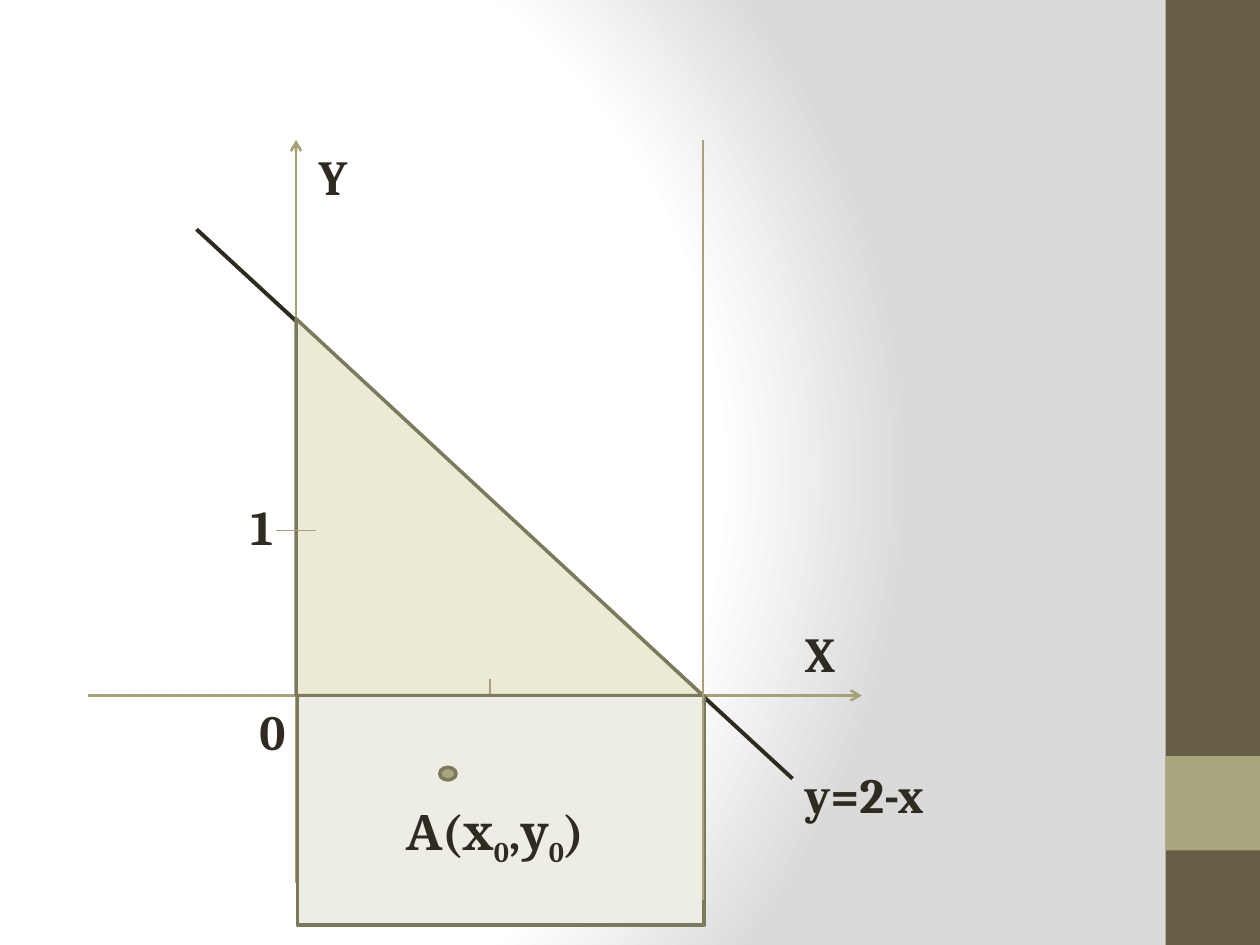
from dataclasses import dataclass

from lxml import etree
from pptx import Presentation
from pptx.dml.color import RGBColor
from pptx.enum import shapes as kinds, text as txt
from pptx.oxml import parse_xml
from pptx.oxml.ns import nsdecls, qn
from pptx.util import Inches, Pt


@dataclass(frozen=True)
class Theme:
    font: str = "Cambria"
    label_size: int = 28
    ink: str = "2F2B20"
    graph: str = "2E2A1F"
    axis: str = "A6A278"
    outline: str = "7D7A5C"
    triangle: str = "ECEAD4"
    rectangle: str = "EEEDE5"
    point: str = "A9A57C"
    sidebar: str = "675E47"
    sidebar_accent: str = "A9A57C"
    back_inner: str = "FFFFFF"
    back_outer: str = "DADADA"
    subscript: int = -25000


@dataclass(frozen=True)
class Box:
    left: float
    top: float
    width: float
    height: float


THEME = Theme()


def set_background(slide):
    """Fill the slide with a radial gradient centred left of the middle."""
    slide.background.fill.solid()
    solid = slide.element.find(".//" + qn("p:bgPr")).find(qn("a:solidFill"))
    stops = [(0, THEME.back_inner), (75, THEME.back_inner), (100, THEME.back_outer)]
    stop_xml = "".join(
        f'<a:gs pos="{pos * 1000}"><a:srgbClr val="{color}"/></a:gs>' for pos, color in stops
    )
    gradient = parse_xml(
        f'<a:gradFill {nsdecls("a")} rotWithShape="1"><a:gsLst>{stop_xml}</a:gsLst>'
        '<a:path path="circle"><a:fillToRect l="20000" t="50000" r="100000" b="50000"/></a:path>'
        "</a:gradFill>"
    )
    solid.getparent().replace(solid, gradient)


def add_figure(slide, kind, box, fill, outline=None):
    figure = slide.shapes.add_shape(
        kind, Inches(box.left), Inches(box.top), Inches(box.width), Inches(box.height)
    )
    figure.shadow.inherit = False
    figure.fill.solid()
    figure.fill.fore_color.rgb = RGBColor.from_string(fill)
    if outline:
        figure.line.color.rgb = RGBColor.from_string(outline)
        figure.line.width = Pt(2)
    else:
        figure.line.fill.background()
    return figure


def add_line(slide, start, end, color, width, arrow=False):
    line = slide.shapes.add_connector(
        kinds.MSO_CONNECTOR.STRAIGHT, *(Inches(value) for value in (*start, *end))
    )
    line.line.color.rgb = RGBColor.from_string(color)
    line.line.width = Pt(width)
    properties = line.element.spPr
    if arrow:
        etree.SubElement(properties.find(qn("a:ln")), qn("a:tailEnd"), type="arrow")
    etree.SubElement(properties, qn("a:effectLst"))


def add_label(slide, left, top, width, parts):
    """Add a bold label; parts are (wording, is_subscript) pairs."""
    label = slide.shapes.add_textbox(Inches(left), Inches(top), Inches(width), Inches(0.57))
    frame = label.text_frame
    frame.word_wrap = True
    frame.auto_size = txt.MSO_AUTO_SIZE.SHAPE_TO_FIT_TEXT
    for wording, is_subscript in parts:
        run = frame.paragraphs[0].add_run()
        run.text = wording
        run.font.name = THEME.font
        run.font.size = Pt(THEME.label_size)
        run.font.bold = True
        run.font.color.rgb = RGBColor.from_string(THEME.ink)
        if is_subscript:
            run.font._element.set("baseline", str(THEME.subscript))


def add_sidebar(slide, box):
    rectangle = kinds.MSO_SHAPE.RECTANGLE
    add_figure(slide, rectangle, box, THEME.sidebar)
    accent = Box(box.left, box.top + 0.8 * box.height, box.width, box.width)
    add_figure(slide, rectangle, accent, THEME.sidebar_accent)


def add_plot(slide, box):
    """Draw the axes, the line y=2-x and the triangle it cuts off."""
    origin_x, origin_y = box.left + 1.65, box.top + 4.41
    right, bottom = box.left + box.width, box.top + box.height
    base, height = 3.23, 2.99
    label_left = origin_x + 3.94

    add_line(slide, (origin_x, bottom), (origin_x, box.top), THEME.axis, 1.5, arrow=True)
    add_line(slide, (box.left, origin_y), (right, origin_y), THEME.axis, 1.5, arrow=True)
    add_line(slide, (origin_x - 0.79, origin_y - 3.7), (label_left, origin_y + 0.66),
             THEME.graph, 2.25)

    triangle = Box(origin_x, origin_y - height, base, height)
    add_figure(slide, kinds.MSO_SHAPE.RIGHT_TRIANGLE, triangle, THEME.triangle, THEME.outline)

    for wording, left, top, width in [
        ("Y", origin_x + 0.08, box.top, 0.79),
        ("X", label_left, origin_y - 0.62, 0.79),
        ("0", origin_x - 0.39, origin_y, 0.39),
        ("1", origin_x - 0.46, origin_y - 1.63, 0.39),
        ("y=2-x", label_left, origin_y + 0.5, 2.04),
    ]:
        add_label(slide, left, top, width, [(wording, False)])

    tick_x, tick_y, half = origin_x + 1.54, origin_y - 1.31, 0.16
    add_line(slide, (tick_x, origin_y - 0.13), (tick_x, origin_y + 0.19), THEME.axis, 1)
    add_line(slide, (origin_x - half, tick_y), (origin_x + half, tick_y), THEME.axis, 1)


def add_lower_region(slide, box, boundary_top):
    """Draw the rectangle below the axis, its right boundary and point A."""
    add_figure(slide, kinds.MSO_SHAPE.RECTANGLE, box, THEME.rectangle, THEME.outline)
    add_label(slide, box.left + 0.76, box.top + 0.79, 1.92,
              [("А(х", False), ("0", True), (",у", False), ("0", True), (")", False)])
    boundary_x = box.left + box.width - 0.01
    add_line(slide, (boundary_x, boundary_top), (boundary_x, box.top + box.height - 0.2),
             THEME.axis, 1)
    point = Box(box.left + 1.13, box.top + 0.57, 0.13, 0.1)
    add_figure(slide, kinds.MSO_SHAPE.OVAL, point, THEME.point, THEME.outline)


def main():
    deck = Presentation()
    deck.slide_width, deck.slide_height = Inches(10), Inches(7.5)
    slide = deck.slides.add_slide(deck.slide_layouts[6])
    plot = Box(0.7, 1.11, 6.14, 5.9)
    set_background(slide)
    add_sidebar(slide, Box(9.25, 0, 0.75, 7.5))
    add_plot(slide, plot)
    add_lower_region(slide, Box(2.36, 5.52, 3.23, 1.82), plot.top)
    deck.save("out.pptx")


if __name__ == "__main__":
    main()
